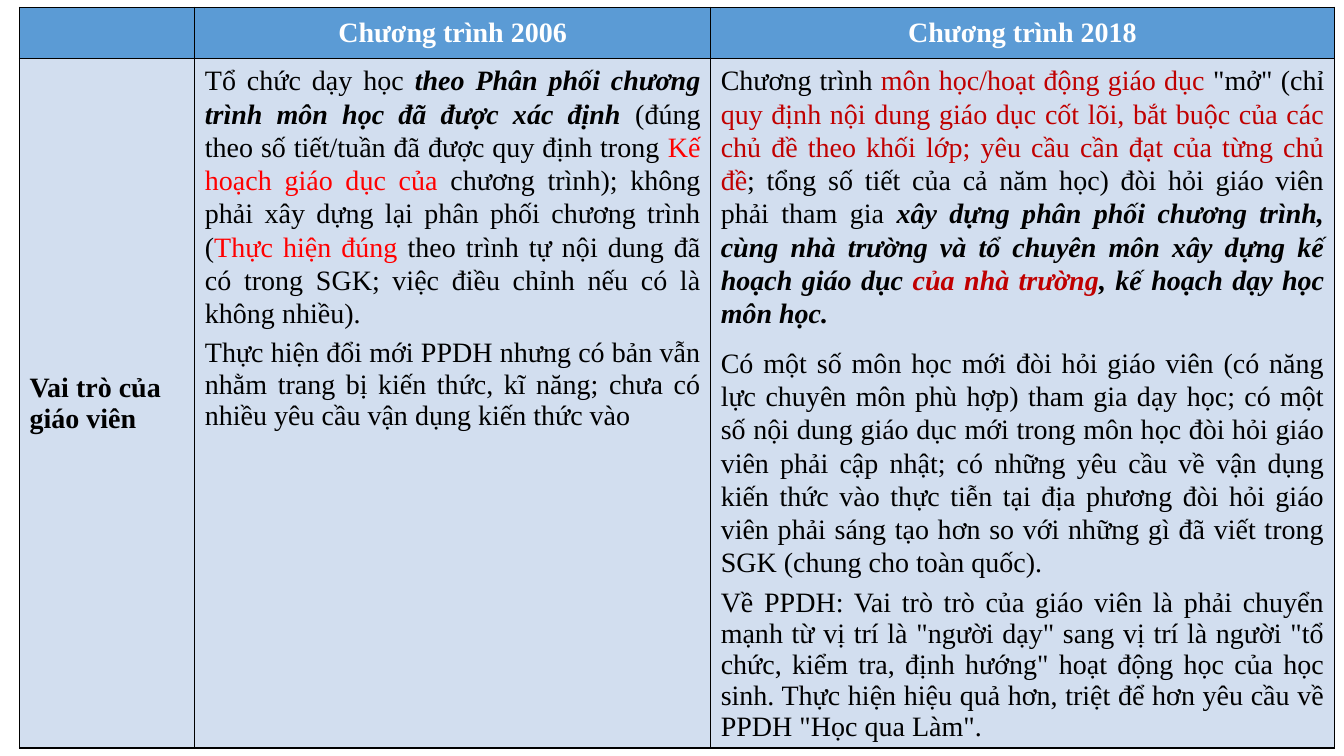
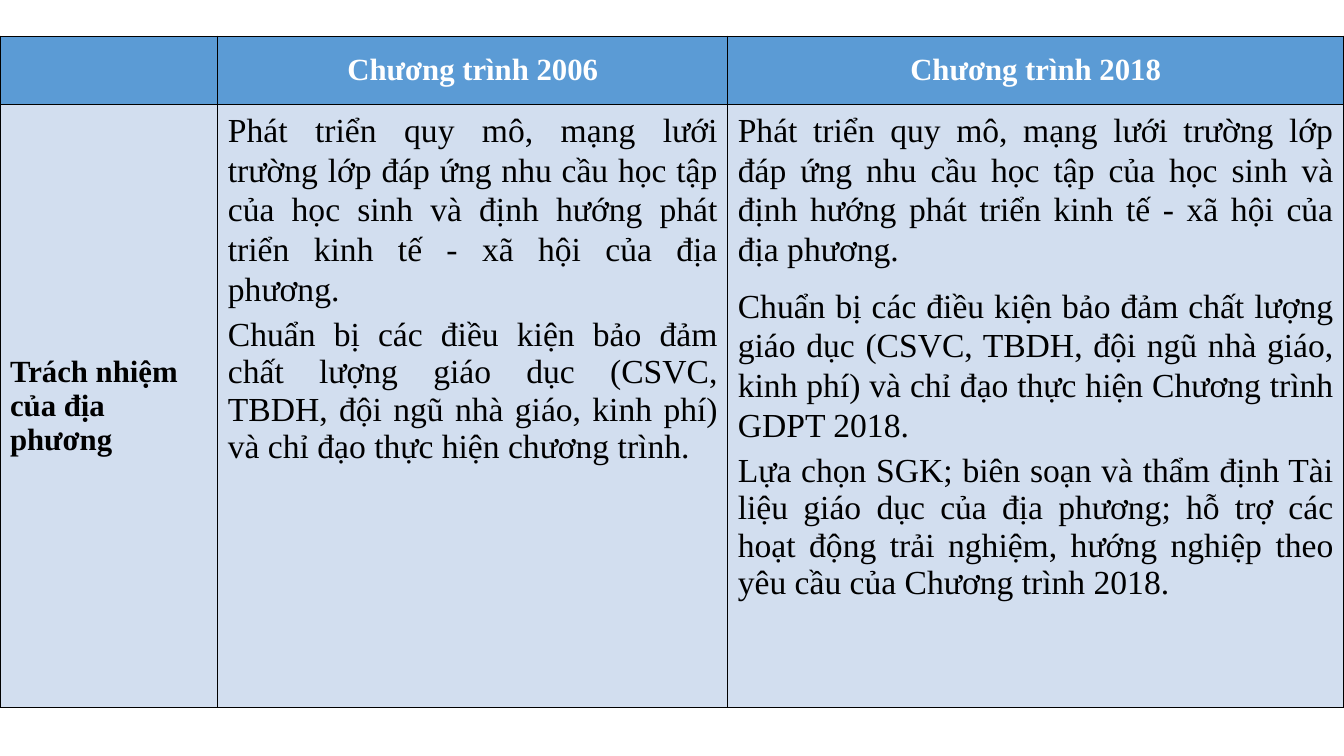
from lxml.etree import SubElement, fromstring
from pptx import Presentation
from pptx.dml.color import RGBColor as RGB
from pptx.enum.text import MSO_ANCHOR as ANCHOR, PP_ALIGN as ALIGN
from pptx.util import Cm, Pt

COLORS = {"header": "5B9BD5", "body": "D2DEEF", "white": "FFFFFF",
          "black": "000000", "red": "FF0000", "crimson": "C00000"}
FONT = "Times New Roman"
HEADERS = ["", "Chương trình 2006", "Chương trình 2018"]
A_NS = "http://schemas.openxmlformats.org/drawingml/2006/main"

# A column is a list of paragraphs; a paragraph is a list of (text, color, emphasis)
SLIDES = [
    {"left": 0.49, "top": 0.18, "cols": [4.42, 13, 15.72], "rows": [1.3, 17.37],
     "head_size": 20, "body_size": 20, "label": "Vai trò của giáo viên",
     "columns": [
         [[("Tổ chức dạy học ", "black", False),
           ("theo Phân phối chương trình môn học đã được xác định ", "black", True),
           ("(đúng theo số tiết/tuần đã được quy định trong ", "black", False),
           ("Kế hoạch giáo dục của ", "red", False),
           ("chương trình); không phải xây dựng lại phân phối chương trình (",
            "black", False),
           ("Thực hiện đúng ", "red", False),
           ("theo trình tự nội dung đã có trong SGK; việc điều chỉnh nếu có là "
            "không nhiều).", "black", False)],
          [("Thực hiện đổi mới PPDH nhưng có bản vẫn nhằm trang bị kiến thức, "
            "kĩ năng; chưa có nhiều yêu cầu vận dụng kiến thức vào", "black", False)]],
         [[("Chương trình ", "black", False),
           ("môn học/hoạt động giáo dục ", "crimson", False),
           ('"mở" (chỉ ', "black", False),
           ("quy định nội dung giáo dục cốt lõi, bắt buộc của các chủ đề theo khối "
            "lớp; yêu cầu cần đạt của từng chủ đề", "crimson", False),
           ("; tổng số tiết của cả năm học) đòi hỏi giáo viên phải tham gia ",
            "black", False),
           ("xây dựng phân phối chương trình, cùng nhà trường và tổ chuyên môn "
            "xây dựng kế hoạch giáo dục ", "black", True),
           ("của nhà trường", "crimson", True),
           (", kế hoạch dạy học môn học.", "black", True)],
          [("Có một số môn học mới đòi hỏi giáo viên (có năng lực chuyên môn phù "
            "hợp) tham gia dạy học; có một số nội dung giáo dục mới trong môn học "
            "đòi hỏi giáo viên phải cập nhật; có những yêu cầu về vận dụng kiến "
            "thức vào thực tiễn tại địa phương đòi hỏi giáo viên phải sáng tạo hơn "
            "so với những gì đã viết trong SGK (chung cho toàn quốc).",
            "black", False)],
          [('Về PPDH: Vai trò trò của giáo viên là phải chuyển mạnh từ vị trí là '
            '"người dạy" sang vị trí là người "tổ chức, kiểm tra, định hướng" hoạt '
            'động học của học sinh. Thực hiện hiệu quả hơn, triệt để hơn yêu cầu '
            'về PPDH "Học qua Làm".', "black", False)]]]},
    {"left": 0, "top": 0.91, "cols": [5.49, 12.85, 15.52], "rows": [1.73, 15.19],
     "head_size": 22, "body_size": 24, "label": "Trách nhiệm của địa phương",
     "columns": [
         [[("Phát triển quy mô, mạng lưới trường lớp đáp ứng nhu cầu học tập của "
            "học sinh và định hướng phát triển kinh tế - xã hội của địa phương.",
            "black", False)],
          [("Chuẩn bị các điều kiện bảo đảm chất lượng giáo dục (CSVC, TBDH, đội "
            "ngũ nhà giáo, kinh phí) và chỉ đạo thực hiện chương trình.",
            "black", False)]],
         [[("Phát triển quy mô, mạng lưới trường lớp đáp ứng nhu cầu học tập của "
            "học sinh và định hướng phát triển kinh tế - xã hội của địa phương.",
            "black", False)],
          [("Chuẩn bị các điều kiện bảo đảm chất lượng giáo dục (CSVC, TBDH, đội "
            "ngũ nhà giáo, kinh phí) và chỉ đạo thực hiện Chương trình GDPT 2018.",
            "black", False)],
          [("Lựa chọn SGK; biên soạn và thẩm định Tài liệu giáo dục của địa "
            "phương; hỗ trợ các hoạt động trải nghiệm, hướng nghiệp theo yêu cầu "
            "của Chương trình 2018.", "black", False)]]]},
]


def style_cell(cell, fill):
    """Fill a cell and give it thin black borders."""
    cell.fill.solid()
    cell.fill.fore_color.rgb = RGB.from_string(COLORS[fill])
    tc_pr = cell._tc.get_or_add_tcPr()
    for i, side in enumerate(["lnL", "lnR", "lnT", "lnB"]):
        ln = fromstring(f'<a:{side} xmlns:a="{A_NS}" w="{Pt(1)}"/>')
        solid = SubElement(ln, f"{{{A_NS}}}solidFill")
        SubElement(solid, f"{{{A_NS}}}srgbClr", val=COLORS["black"])
        tc_pr.insert(i, ln)


def style_paragraph(p, size, color, bold, align):
    p.alignment = align
    p.font.name, p.font.size, p.font.bold = FONT, Pt(size), bold
    p.font.color.rgb = RGB.from_string(COLORS[color])


prs = Presentation()
prs.slide_width, prs.slide_height = Cm(33.87), Cm(19.05)

for data in SLIDES:
    s = prs.slides.add_slide(prs.slide_layouts[6])
    table = s.shapes.add_table(2, 3, Cm(data["left"]), Cm(data["top"]),
                               Cm(sum(data["cols"])), Cm(sum(data["rows"]))).table
    table.horz_banding = False
    for col, width in zip(table.columns, data["cols"]):
        col.width = Cm(width)
    for row, height in zip(table.rows, data["rows"]):
        row.height = Cm(height)

    # Header row
    for i, title in enumerate(HEADERS):
        cell = table.cell(0, i)
        style_cell(cell, "header")
        cell.vertical_anchor = ANCHOR.MIDDLE
        cell.text = title
        style_paragraph(cell.text_frame.paragraphs[0], data["head_size"],
                        "white", True, ALIGN.CENTER)

    # Row label
    cell = table.cell(1, 0)
    style_cell(cell, "body")
    cell.vertical_anchor = ANCHOR.MIDDLE
    cell.text = data["label"]
    style_paragraph(cell.text_frame.paragraphs[0], data["head_size"],
                    "black", True, ALIGN.LEFT)

    # Body columns: every paragraph but the last is spaced out
    for i, paragraphs in enumerate(data["columns"], start=1):
        cell = table.cell(1, i)
        style_cell(cell, "body")
        tf = cell.text_frame
        for n, runs in enumerate(paragraphs):
            p = tf.add_paragraph() if n else tf.paragraphs[0]
            style_paragraph(p, data["body_size"], "black", False, ALIGN.JUSTIFY)
            if n < len(paragraphs) - 1:
                p.line_spacing = 1.07
                p.space_before = p.space_after = Pt(6)
            for text, color, emphasis in runs:
                r = p.add_run()
                r.text = text
                if color != "black":
                    r.font.color.rgb = RGB.from_string(COLORS[color])
                if emphasis:
                    r.font.bold = r.font.italic = True

prs.save("out.pptx")
